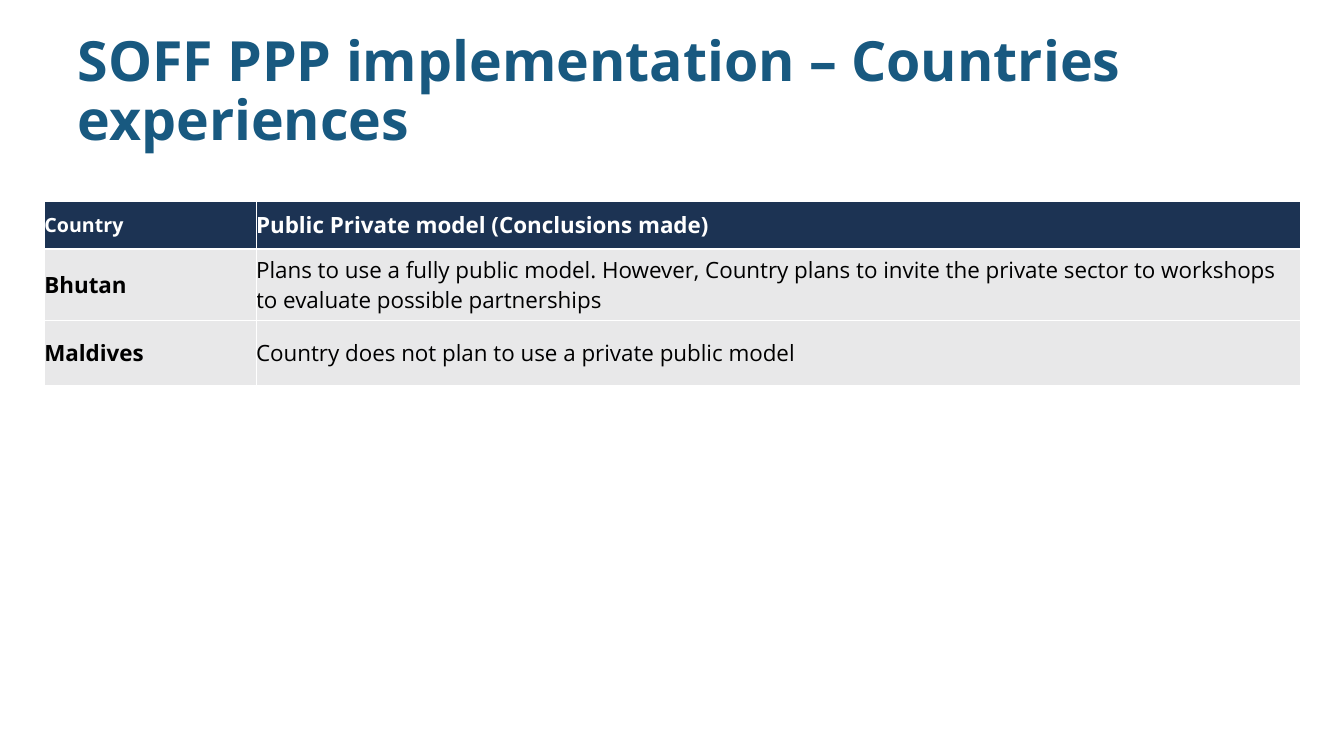
from dataclasses import dataclass

from lxml import etree
from pptx import Presentation
from pptx import util as u
from pptx.dml.color import RGBColor
from pptx.enum import text
from pptx.oxml.ns import qn

PX = 9144


@dataclass(frozen=True)
class Theme:
    font: str = "Open Sans"
    title: str = "185980"
    header: str = "1C3353"
    body: str = "E8E8E9"
    light: str = "FFFFFF"
    dark: str = "000000"
    title_size: float = 39.6
    label_size: int = 14
    text_size: int = 16
    border_width: int = 1


THEME = Theme()
COLUMN_WIDTHS = [210, 1036]
ROW_HEIGHTS = [47, 71, 65]
ROWS = [
    ("Country", "Public Private model (Conclusions made)"),
    ("Bhutan", "Plans to use a fully public model. However, Country plans to invite "
               "the private sector to workshops to evaluate possible partnerships"),
    ("Maldives", "Country does not plan to use a private public model"),
]


def px(length):
    return u.Emu(length * PX)


def style(paragraph, size, color, bold):
    font = paragraph.font
    font.name = THEME.font
    font.size = u.Pt(size)
    font.bold = bold
    font.color.rgb = RGBColor.from_string(color)


def set_title(slide, words, left, top, width, height):
    title = slide.shapes.title
    title.left, title.top, title.width, title.height = map(px, (left, top, width, height))
    frame = title.text_frame
    frame.text = words
    frame.word_wrap = True
    frame.auto_size = text.MSO_AUTO_SIZE.NONE
    frame.vertical_anchor = text.MSO_ANCHOR.MIDDLE
    paragraph = frame.paragraphs[0]
    paragraph.alignment = text.PP_ALIGN.LEFT
    paragraph.line_spacing = 0.88
    style(paragraph, THEME.title_size, THEME.title, True)


def add_borders(cell):
    properties = cell._tc.get_or_add_tcPr()
    for position, side in enumerate(("a:lnL", "a:lnR", "a:lnT", "a:lnB")):
        line = etree.Element(qn(side), w=str(u.Pt(THEME.border_width)))
        fill = etree.SubElement(line, qn("a:solidFill"))
        etree.SubElement(fill, qn("a:srgbClr"), val=THEME.light)
        properties.insert(position, line)


def fill_cell(cell, words, fill, size, color, bold):
    cell.text = words
    cell.vertical_anchor = text.MSO_ANCHOR.MIDDLE
    cell.margin_left = cell.margin_right = cell.margin_top = cell.margin_bottom = 0
    cell.fill.solid()
    cell.fill.fore_color.rgb = RGBColor.from_string(fill)
    add_borders(cell)
    style(cell.text_frame.paragraphs[0], size, color, bold)


def add_country_table(slide, left, top):
    table = slide.shapes.add_table(
        len(ROWS), len(COLUMN_WIDTHS), px(left), px(top),
        px(sum(COLUMN_WIDTHS)), px(sum(ROW_HEIGHTS))).table
    for column, width in zip(table.columns, COLUMN_WIDTHS):
        column.width = px(width)
    for row, height in zip(table.rows, ROW_HEIGHTS):
        row.height = px(height)
    for row_index, row in enumerate(ROWS):
        for column_index, words in enumerate(row):
            is_header, is_label = row_index == 0, column_index == 0
            fill_cell(
                table.cell(row_index, column_index), words,
                fill=THEME.header if is_header else THEME.body,
                size=THEME.label_size if is_header and is_label else THEME.text_size,
                color=THEME.light if is_header else THEME.dark,
                bold=is_header or is_label)


def main():
    presentation = Presentation()
    presentation.slide_width, presentation.slide_height = px(1333), px(750)
    slide = presentation.slides.add_slide(presentation.slide_layouts.get_by_name("Title Only"))
    set_title(slide, "SOFF PPP implementation – Countries experiences", 67, 30, 1200, 125)
    add_country_table(slide, 44, 200)
    presentation.save("out.pptx")


if __name__ == "__main__":
    main()
